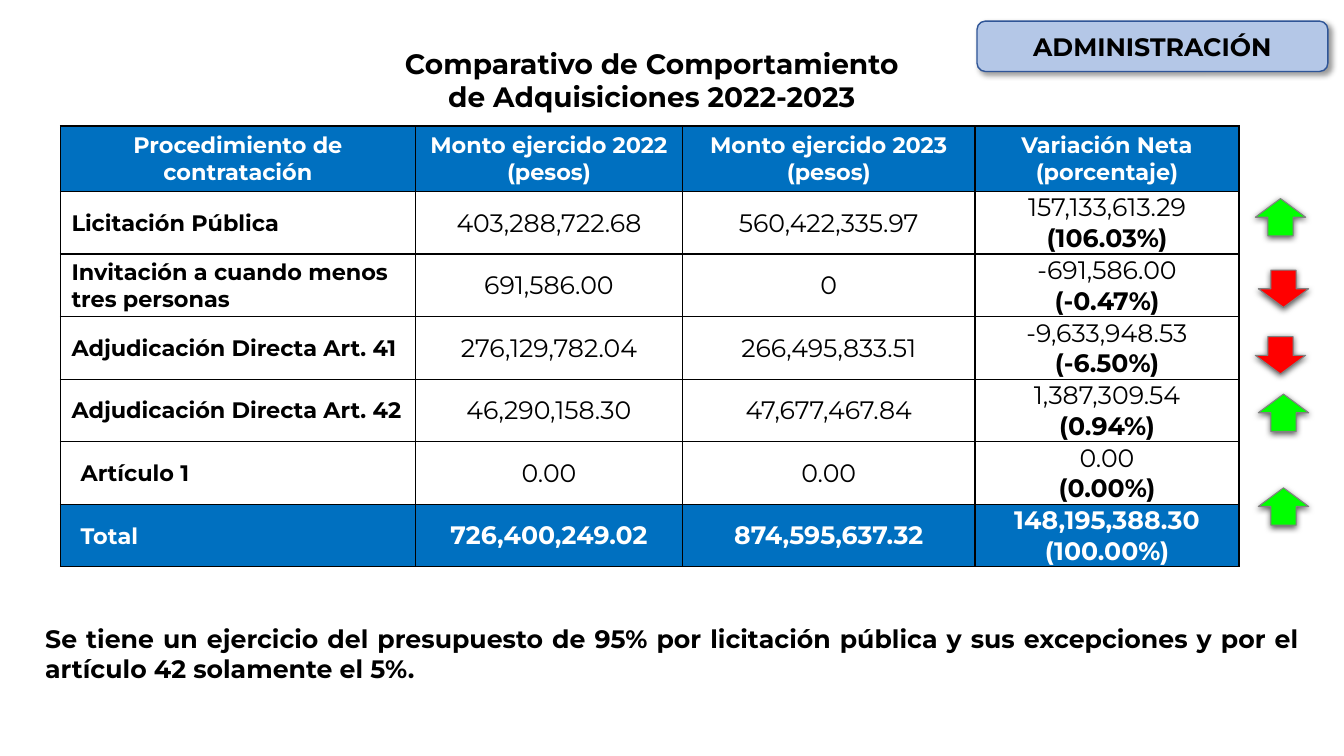
from dataclasses import dataclass

from lxml import etree
from pptx import Presentation
from pptx.dml.color import RGBColor
from pptx.enum.shapes import MSO_SHAPE
from pptx.enum.text import MSO_ANCHOR, MSO_AUTO_SIZE, PP_ALIGN
from pptx.oxml import parse_xml
from pptx.oxml.ns import nsdecls, qn
from pptx.util import Inches, Pt

DOWN, ROUND = MSO_SHAPE.DOWN_ARROW, MSO_SHAPE.ROUNDED_RECTANGLE
TOP, MIDDLE = MSO_ANCHOR.TOP, MSO_ANCHOR.MIDDLE
LEFT, CENTER, JUSTIFY = PP_ALIGN.LEFT, PP_ALIGN.CENTER, PP_ALIGN.JUSTIFY
NO_FIT = MSO_AUTO_SIZE.NONE


@dataclass(frozen=True)
class Theme:
    font: str = "Montserrat"
    black: str = "000000"
    white: str = "FFFFFF"
    blue: str = "0070C0"
    green: str = "00FF00"
    red: str = "FF0000"
    gray: str = "808080"
    badge: str = "B4C7E7"
    edge: str = "2F5597"
    title: int = 20
    body: int = 18
    label: int = 16


@dataclass(frozen=True)
class Row:
    label: str
    before: str
    after: str
    change: str
    share: str
    indent: float = 0.1
    total: bool = False


@dataclass(frozen=True)
class Arrow:
    left: float
    top: float
    rises: bool


@dataclass(frozen=True)
class Shadow:
    alpha: int
    blur: float
    dist: float
    angle: int


THEME = Theme()
COLS = (3.52, 2.65, 2.9, 2.62)
HEAD_H, ROW_H = 0.65, 0.62
HEADS = (
    ("Procedimiento de contratación",),
    ("Monto ejercido 2022 (pesos)",),
    ("Monto ejercido 2023 (pesos)",),
    ("Variación Neta", "(porcentaje)"),
)
ROWS = (
    Row("Licitación Pública", "403,288,722.68", "560,422,335.97", "157,133,613.29", "(106.03%)"),
    Row("Invitación a cuando menos tres personas", "691,586.00", "0", "-691,586.00", "(-0.47%)"),
    Row("Adjudicación Directa Art. 41", "276,129,782.04", "266,495,833.51", "-9,633,948.53", "(-6.50%)"),
    Row("Adjudicación Directa Art. 42", "46,290,158.30", "47,677,467.84", "1,387,309.54", "(0.94%)"),
    Row("Artículo 1", "0.00", "0.00", "0.00", "(0.00%)", 0.19),
    Row("Total", "726,400,249.02", "874,595,637.32", "148,195,388.30", "(100.00%)", 0.19, True),
)
ARROWS = (
    Arrow(12.45, 1.97, True),
    Arrow(12.48, 2.68, False),
    Arrow(12.45, 3.34, False),
    Arrow(12.48, 3.91, True),
    Arrow(12.48, 4.84, True),
)


def write(frame, lines, size, color=THEME.black, bold=(True,), align=CENTER) -> None:
    """Fill a text frame; the last bold flag serves all further lines."""
    frame.text = "\n".join(lines)
    for i, para in enumerate(frame.paragraphs):
        para.alignment = align
        para.font.name = THEME.font
        para.font.size = Pt(size)
        para.font.bold = bold[min(i, len(bold) - 1)]
        para.font.color.rgb = RGBColor.from_string(color)


def frame_cell(cell) -> None:
    props = cell._tc.get_or_add_tcPr()
    for i, side in enumerate(("lnL", "lnR", "lnT", "lnB")):
        props.insert(i, parse_xml(
            f'<a:{side} {nsdecls("a")} w="{Pt(1)}"><a:solidFill>'
            f'<a:srgbClr val="{THEME.black}"/></a:solidFill></a:{side}>'))


def fill_cell(cell, lines, size, color, bold, align=CENTER, fill=None, indent=0.0) -> None:
    cell.margin_left = Inches(0.01 + indent)
    cell.margin_right = cell.margin_top = Inches(0.01)
    cell.margin_bottom = 0
    cell.vertical_anchor = MIDDLE
    write(cell.text_frame, lines, size, color, bold, align)
    if fill:
        cell.fill.solid()
        cell.fill.fore_color.rgb = RGBColor.from_string(fill)
    else:
        cell.fill.background()
    frame_cell(cell)


def add_grid(slide) -> None:
    heights = [HEAD_H] + [ROW_H] * len(ROWS)
    table = slide.shapes.add_table(
        len(heights), len(COLS), Inches(0.6), Inches(1.25),
        Inches(sum(COLS)), Inches(sum(heights))).table
    table.first_row = table.horz_banding = False
    for col, width in zip(table.columns, COLS):
        col.width = Inches(width)
    for line, height in zip(table.rows, heights):
        line.height = Inches(height)
    for c, lines in enumerate(HEADS):
        fill_cell(table.cell(0, c), lines, THEME.label, THEME.white, (True,), fill=THEME.blue)
    for r, row in enumerate(ROWS, 1):
        color, fill = (THEME.white, THEME.blue) if row.total else (THEME.black, None)
        fill_cell(table.cell(r, 0), (row.label,), THEME.label, color, (True,), LEFT, fill, row.indent)
        values = ((row.before,), (row.after,), (row.change, row.share))
        for c, lines in enumerate(values, 1):
            fill_cell(table.cell(r, c), lines, THEME.body, color, (row.total, True), fill=fill)


def add_form(slide, kind, box, fill, line, width, shade: Shadow):
    form = slide.shapes.add_shape(kind, *map(Inches, box))
    form.fill.solid()
    form.fill.fore_color.rgb = RGBColor.from_string(fill)
    form.line.color.rgb = RGBColor.from_string(line)
    form.line.width = Pt(width)
    form.shadow.inherit = False
    effects = form._element.spPr.find(qn("a:effectLst"))
    outer = etree.SubElement(
        effects, qn("a:outerShdw"), blurRad=str(Pt(shade.blur)), dist=str(Pt(shade.dist)),
        dir=str(shade.angle * 60000), rotWithShape="0")
    tint = etree.SubElement(outer, qn("a:srgbClr"), val=THEME.black)
    etree.SubElement(tint, qn("a:alpha"), val=str(shade.alpha * 1000))
    return form


def place(shape, box, anchor) -> None:
    shape.left, shape.top, shape.width, shape.height = map(Inches, box)
    frame = shape.text_frame
    frame.word_wrap = True
    frame.auto_size = NO_FIT
    frame.vertical_anchor = anchor


def main() -> None:
    deck = Presentation()
    deck.slide_width, deck.slide_height = Inches(13.33), Inches(7.5)
    slide = deck.slides.add_slide(deck.slide_layouts[5])

    # Title
    title = slide.shapes.title
    place(title, (3.88, 0.41, 5.17, 0.77), TOP)
    write(title.text_frame, ("Comparativo de Comportamiento de Adquisiciones 2022-2023",), THEME.title)

    # Table of amounts
    add_grid(slide)

    # Trend arrows
    for arrow in ARROWS:
        form = add_form(
            slide, DOWN, (arrow.left, arrow.top, 0.5, 0.37),
            THEME.green if arrow.rises else THEME.red, THEME.gray, 0.75, Shadow(63, 4.5, 1.5, 90))
        form.rotation = 180 if arrow.rises else 0

    # Closing note
    box = (0.35, 6.13, 12.63, 0.71)
    note = slide.shapes.add_textbox(*map(Inches, box))
    place(note, box, TOP)
    write(note.text_frame, (
        "Se tiene un ejercicio del presupuesto de 95% por licitación pública y sus "
        "excepciones y por el artículo 42 solamente el 5%.",), THEME.body, align=JUSTIFY)

    # Section badge
    box = (9.69, 0.21, 3.48, 0.5)
    badge = add_form(slide, ROUND, box, THEME.badge, THEME.edge, 1, Shadow(40, 4, 3, 45))
    place(badge, box, MIDDLE)
    write(badge.text_frame, ("ADMINISTRACIÓN",), THEME.body)

    deck.save("out.pptx")


if __name__ == "__main__":
    main()
